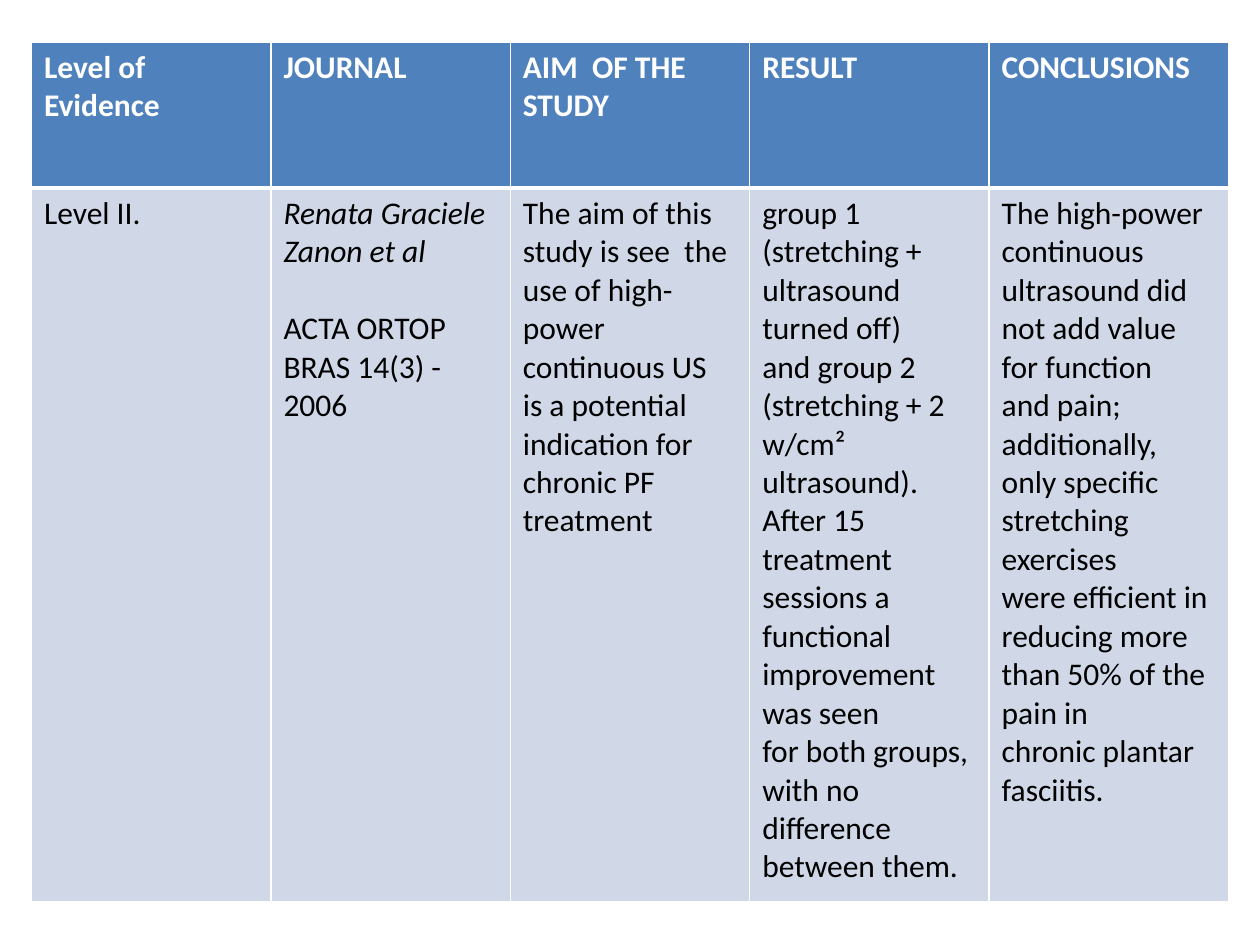
"""Build a slide with a one-study evidence table."""
from dataclasses import dataclass

from lxml.etree import SubElement
from pptx import Presentation
from pptx.dml.color import RGBColor
from pptx.oxml.ns import qn
from pptx.table import _Cell as Cell
from pptx.util import Pt

WHITE, BLACK = "FFFFFF", "000000"


@dataclass(frozen=True)
class Look:
    fill: str
    ink: str
    bold: bool
    top: int
    base: int


@dataclass(frozen=True)
class Para:
    text: str
    slant: bool = False
    gap: float = 0


@dataclass(frozen=True)
class Column:
    head: str
    body: tuple[Para, ...]


HEAD = Look("4F81BD", WHITE, True, 1, 3)
BODY = Look("D0D8E8", BLACK, False, 3, 1)

COLUMNS = (
    Column("Level of Evidence", (Para("Level II."),)),
    Column("JOURNAL", (
        Para("Renata Graciele Zanon et al", slant=True),
        Para("ACTA ORTOP BRAS 14(3) - 2006", gap=22),
    )),
    Column("AIM  OF THE STUDY", (
        Para("The aim of this study is see  the use of high-power continuous US"),
        Para("is a potential indication for chronic PF treatment"),
    )),
    Column("RESULT", (
        Para("group 1 (stretching + ultrasound turned off)"),
        Para("and group 2 (stretching + 2 w/cm² ultrasound). After 15"),
        Para("treatment sessions a functional improvement was seen"),
        Para("for both groups, with no difference between them."),
    )),
    Column("CONCLUSIONS", (
        Para("The high-power"),
        Para("continuous ultrasound did not add value for function"),
        Para("and pain; additionally, only specific stretching exercises"),
        Para("were efficient in reducing more than 50% of the pain in"),
        Para("chronic plantar fasciitis."),
    )),
)


def color(code: str) -> RGBColor:
    return RGBColor.from_string(code)


def edge(cell: Cell, look: Look) -> None:
    props = cell._tc.get_or_add_tcPr()
    sides = {"lnL": 1, "lnR": 1, "lnT": look.top, "lnB": look.base}
    for side, width in sides.items():
        line = SubElement(props, qn(f"a:{side}"), w=str(Pt(width)))
        fill = SubElement(line, qn("a:solidFill"))
        SubElement(fill, qn("a:srgbClr"), val=WHITE)


def write(cell: Cell, paras: tuple[Para, ...], look: Look) -> None:
    edge(cell, look)
    cell.fill.solid()
    cell.fill.fore_color.rgb = color(look.fill)
    frame = cell.text_frame
    for index, para in enumerate(paras):
        item = frame.add_paragraph() if index else frame.paragraphs[0]
        item.text = para.text
        if para.gap:
            item.space_before = Pt(para.gap)
        font = item.font
        font.name, font.size = "Calibri", Pt(18)
        font.bold, font.italic = look.bold, para.slant
        font.color.rgb = color(look.ink)


def main() -> None:
    deck = Presentation()
    deck.slide_width, deck.slide_height = Pt(720), Pt(540)
    slide = deck.slides.add_slide(deck.slide_layouts[6])
    heights = (83.5, 408)
    table = slide.shapes.add_table(
        len(heights), len(COLUMNS), Pt(18), Pt(24), Pt(684), Pt(sum(heights))
    ).table
    for row, height in zip(table.rows, heights):
        row.height = Pt(height)
    for index, column in enumerate(COLUMNS):
        table.columns[index].width = Pt(684 / len(COLUMNS))
        write(table.cell(0, index), (Para(column.head),), HEAD)
        write(table.cell(1, index), column.body, BODY)
    deck.save("out.pptx")


if __name__ == "__main__":
    main()
